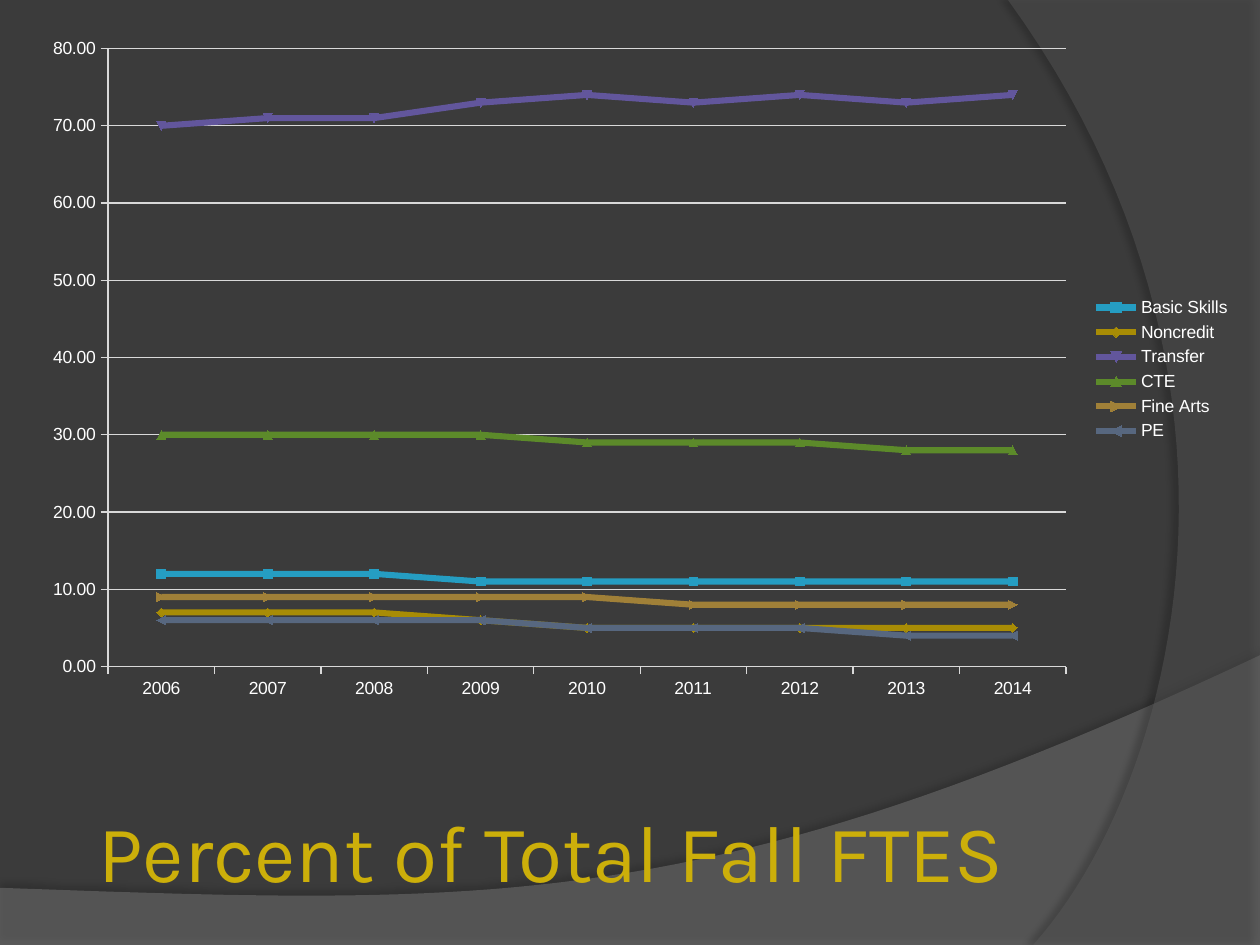
from dataclasses import dataclass

from lxml import etree
from pptx import Presentation
from pptx import util as u
from pptx.chart.data import CategoryChartData
from pptx.dml.color import RGBColor
from pptx.enum import chart as ch, text
from pptx.oxml import parse_xml
from pptx.oxml.ns import nsdecls, qn


@dataclass(frozen=True)
class Theme:
    """Colours, fonts and type sizes of the slide."""
    background: str = "3B3B3B"
    wave: str = "7F7F7F"
    arc: str = "5E5E5E"
    title: str = "CCAF0A"
    label: str = "FFFFFF"
    grid: str = "D9D9D9"
    title_font: str = "Karla"
    label_font: str = "Arial"
    title_size: float = 46
    label_size: float = 10
    line_width: float = 3.5


THEME = Theme()
YEARS = [str(year) for year in range(2006, 2015)]
PROGRAMS = [
    ("Basic Skills", "259DC2", (12, 12, 12, 11, 11, 11, 11, 11, 11)),
    ("Noncredit", "A88C05", (7, 7, 7, 6, 5, 5, 5, 5, 5)),
    ("Transfer", "62569C", (70, 71, 71, 73, 74, 73, 74, 73, 74)),
    ("CTE", "5C8A2A", (30, 30, 30, 30, 29, 29, 29, 28, 28)),
    ("Fine Arts", "A08038", (9, 9, 9, 9, 9, 8, 8, 8, 8)),
    ("PE", "57677F", (6, 6, 6, 6, 5, 5, 5, 4, 4)),
]


def rgb(code):
    """Turn a hex code into a colour."""
    return RGBColor.from_string(code)


def bezier(start, first, second, end, steps=48):
    """Return points along a cubic curve."""
    curve = []
    for step in range(steps + 1):
        t = step / steps
        weights = ((1 - t) ** 3, 3 * t * (1 - t) ** 2, 3 * t * t * (1 - t), t ** 3)
        curve.append(tuple(
            sum(w * p[axis] for w, p in zip(weights, (start, first, second, end)))
            for axis in (0, 1)))
    return curve


def add_backdrop(slide, box, outline, color, opacity, shade, distance, direction):
    """Draw a translucent shadowed outline given in fractions of the box."""
    left, top, width, height = box
    points = [(int(left + x * width), int(top + y * height)) for x, y in outline]
    builder = slide.shapes.build_freeform(*points[0])
    builder.add_line_segments(points[1:], close=True)
    backdrop = builder.convert_to_shape()
    backdrop.fill.solid()
    backdrop.fill.fore_color.rgb = rgb(color)
    backdrop.line.fill.background()
    tint = backdrop.fill._xPr.find(qn("a:solidFill"))[0]
    etree.SubElement(tint, qn("a:alpha"), val=str(opacity * 1000))
    backdrop._element.spPr.append(parse_xml(
        f'<a:effectLst {nsdecls("a")}><a:outerShdw blurRad="{u.Pt(4)}" '
        f'dist="{u.Pt(distance)}" dir="{direction * 60000}" algn="ctr" rotWithShape="0">'
        f'<a:srgbClr val="000000"><a:alpha val="{shade * 1000}"/></a:srgbClr>'
        '</a:outerShdw></a:effectLst>'))


def add_backdrops(slide, box):
    """Place the wave along the bottom and the arc at the right."""
    left, top, width, height = box
    wave_top, wave_height, arc_width = u.Cm(13.21), u.Cm(5.86), u.Cm(5.08)
    wave = [(0, 0.8), (0, 1), (1, 1)] + bezier(
        (1, 0), (0.56, 0.9), (0.39, 0.86), (0, 0.8))
    add_backdrop(slide, (left, top + wave_top, width, wave_height),
                 wave, THEME.wave, 45, 35, 3.5, 270)
    arc = [(1, 0), (1, 1)] + bezier((0.1, 1), (0.67, 0.83), (1.09, 0.4), (0, 0))
    add_backdrop(slide, (left + width - arc_width, top, arc_width, height),
                 arc, THEME.arc, 40, 45, 4, 180)


def place_title(slide, box, wording):
    """Move the title placeholder into the box and format it."""
    title = slide.shapes.title
    title.left, title.top, title.width, title.height = box
    frame = title.text_frame
    frame.text = wording
    frame.word_wrap = True
    frame.auto_size = text.MSO_AUTO_SIZE.NONE
    frame.vertical_anchor = text.MSO_ANCHOR.MIDDLE
    frame.margin_left = frame.margin_right = u.Cm(0.13)
    frame.margin_top = frame.margin_bottom = u.Cm(0.13)
    heading = frame.paragraphs[0]
    heading.alignment = text.PP_ALIGN.LEFT
    heading.font.name = THEME.title_font
    heading.font.size = u.Pt(THEME.title_size)
    heading.font.color.rgb = rgb(THEME.title)
    slide.shapes._spTree.append(title._element)


def style_axis(axis):
    """Give an axis its line and outward ticks."""
    axis.format.line.color.rgb = rgb(THEME.grid)
    axis.format.line.width = u.Pt(0.75)
    axis.major_tick_mark = ch.XL_TICK_MARK.OUTSIDE
    axis.minor_tick_mark = ch.XL_TICK_MARK.NONE


def fix_plot_area(chart, **fractions):
    """Pin the inner plot area to fractions of the chart."""
    plot_area = chart._chartSpace.chart.plotArea
    for old in plot_area.findall(qn("c:layout")):
        plot_area.remove(old)
    modes = '<c:xMode val="edge"/><c:yMode val="edge"/>'
    sides = "".join(f'<c:{side} val="{share}"/>' for side, share in fractions.items())
    plot_area.insert(0, parse_xml(
        f'<c:layout {nsdecls("c")}><c:manualLayout><c:layoutTarget val="inner"/>'
        f'{modes}{sides}</c:manualLayout></c:layout>'))


def add_trend(slide, box):
    """Draw the line chart of enrolment shares in the box."""
    shares = CategoryChartData(number_format="0.00")
    shares.categories = YEARS
    for name, _, values in PROGRAMS:
        shares.add_series(name, values)
    chart = slide.shapes.add_chart(ch.XL_CHART_TYPE.LINE_MARKERS, *box, shares).chart
    chart.has_title = False
    chart.font.name = THEME.label_font
    chart.font.size = u.Pt(THEME.label_size)
    chart.font.color.rgb = rgb(THEME.label)
    chart.has_legend = True
    chart.legend.position = ch.XL_LEGEND_POSITION.RIGHT
    chart.legend.include_in_layout = False
    style_axis(chart.category_axis)
    percent = chart.value_axis
    style_axis(percent)
    percent.minimum_scale, percent.maximum_scale, percent.major_unit = 0, 80, 10
    percent.tick_labels.number_format = "0.00"
    percent.tick_labels.number_format_is_linked = False
    percent.has_major_gridlines = True
    percent.major_gridlines.format.line.color.rgb = rgb(THEME.grid)
    percent.major_gridlines.format.line.width = u.Pt(0.75)
    chart.plots[0].vary_by_categories = False
    for series, (_, color, _) in zip(chart.plots[0].series, PROGRAMS):
        series.smooth = False
        series.format.line.color.rgb = rgb(color)
        series.format.line.width = u.Pt(THEME.line_width)
        series.marker.format.fill.solid()
        series.marker.format.fill.fore_color.rgb = rgb(color)
    _, _, width, height = box
    fix_plot_area(chart, x=u.Cm(1.6) / width, y=u.Cm(0.47) / height,
                  w=u.Cm(19.31) / width, h=u.Cm(12.46) / height)


def main():
    """Build and save the slide."""
    deck = Presentation()
    deck.slide_width, deck.slide_height = u.Cm(25.4), u.Cm(19.05)
    slide = deck.slides.add_slide(deck.slide_layouts[5])
    slide.background.fill.solid()
    slide.background.fill.fore_color.rgb = rgb(THEME.background)
    add_backdrops(slide, (0, 0, deck.slide_width, deck.slide_height))
    place_title(slide, (u.Cm(1.85), u.Cm(15.75), u.Cm(22.35), u.Cm(2.79)),
                "Percent of Total Fall FTES")
    add_trend(slide, (u.Cm(0.58), u.Cm(0.51), u.Cm(24.49), u.Cm(13.87)))
    deck.save("out.pptx")


if __name__ == "__main__":
    main()
